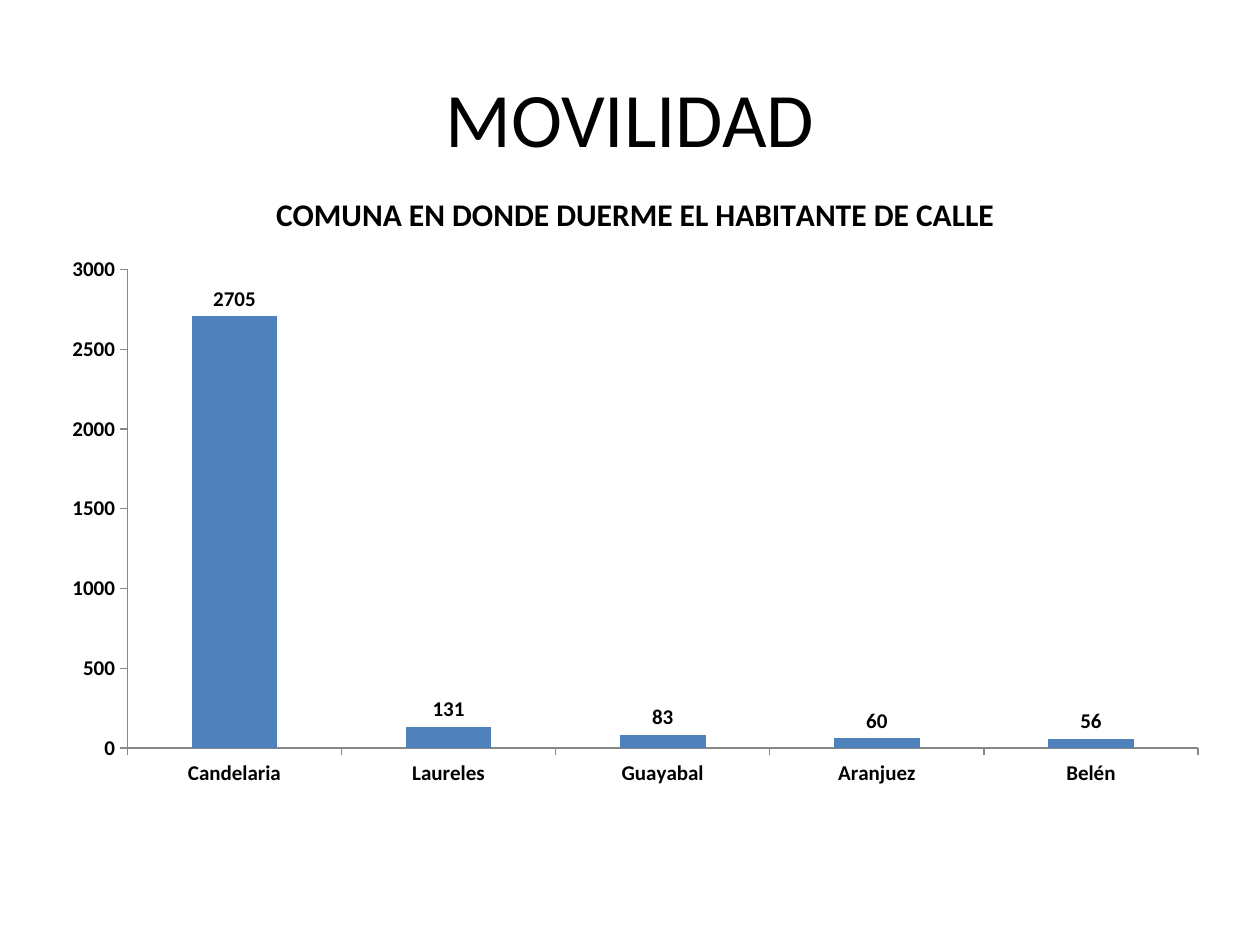
from pptx import Presentation
from pptx.chart.data import CategoryChartData
from pptx.dml.color import RGBColor
from pptx.enum.chart import XL_CHART_TYPE, XL_LABEL_POSITION, XL_TICK_MARK
from pptx.enum.text import MSO_ANCHOR, PP_ALIGN
from pptx.util import Pt

COLUMN = XL_CHART_TYPE.COLUMN_CLUSTERED
ABOVE = XL_LABEL_POSITION.OUTSIDE_END
OUTSIDE = XL_TICK_MARK.OUTSIDE
MIDDLE = MSO_ANCHOR.MIDDLE
CENTER = PP_ALIGN.CENTER

COLORS = {"text": "000000", "bar": "4F81BD", "axis": "878787"}
FACE = "Calibri"
TITLE_ONLY = 5

SLEEPERS = {
    "Candelaria": 2705,
    "Laureles": 131,
    "Guayabal": 83,
    "Aranjuez": 60,
    "Belén": 56,
}


def color(name):
    return RGBColor.from_string(COLORS[name])


def style(font, size, bold=False):
    font.name = FACE
    font.size = Pt(size)
    font.bold = bold
    font.color.rgb = color("text")


def write(frame, text, size=12, bold=False, align=CENTER):
    frame.text = text
    par = frame.paragraphs[0]
    par.alignment = align
    style(par.runs[0].font, size, bold)


class Deck:
    def __init__(self, width, height):
        self.file = Presentation()
        self.file.slide_width = Pt(width)
        self.file.slide_height = Pt(height)
        self.slide = self.file.slides.add_slide(
            self.file.slide_layouts[TITLE_ONLY])

    def title(self, text, left, top, width, height):
        box = self.slide.shapes.title
        box.left, box.top = Pt(left), Pt(top)
        box.width, box.height = Pt(width), Pt(height)
        box.text_frame.vertical_anchor = MIDDLE
        write(box.text_frame, text, size=44)

    def columns(self, head, values, left, top, width, height):
        data = CategoryChartData()
        data.categories = list(values)
        data.add_series("Series 1", list(values.values()))
        chart = self.slide.shapes.add_chart(
            COLUMN, Pt(left), Pt(top), Pt(width), Pt(height), data).chart
        style(chart.font, 12, bold=True)
        chart.has_legend = False
        chart.has_title = True
        write(chart.chart_title.text_frame, head, size=18, bold=True)
        chart.chart_title.include_in_layout = False

        plot = chart.plots[0]
        plot.gap_width = 150
        plot.vary_by_categories = False
        fill = plot.series[0].format.fill
        fill.solid()
        fill.fore_color.rgb = color("bar")
        plot.has_data_labels = True
        labels = plot.data_labels
        labels.show_value = True
        labels.position = ABOVE
        style(labels.font, 12, bold=True)

        for axis in (chart.category_axis, chart.value_axis):
            axis.has_major_gridlines = False
            axis.major_tick_mark = OUTSIDE
            axis.format.line.color.rgb = color("axis")
            axis.format.line.width = Pt(0.75)
        chart.value_axis.minimum_scale = 0
        chart.value_axis.maximum_scale = 3000
        chart.value_axis.major_unit = 500

    def save(self):
        self.file.save("out.pptx")


def main():
    deck = Deck(720, 540)
    deck.columns("COMUNA EN DONDE DUERME EL HABITANTE DE CALLE", SLEEPERS,
                 28, 96, 670, 360)
    deck.title("MOVILIDAD", 36, 21.6, 648, 90)
    deck.save()


if __name__ == "__main__":
    main()
